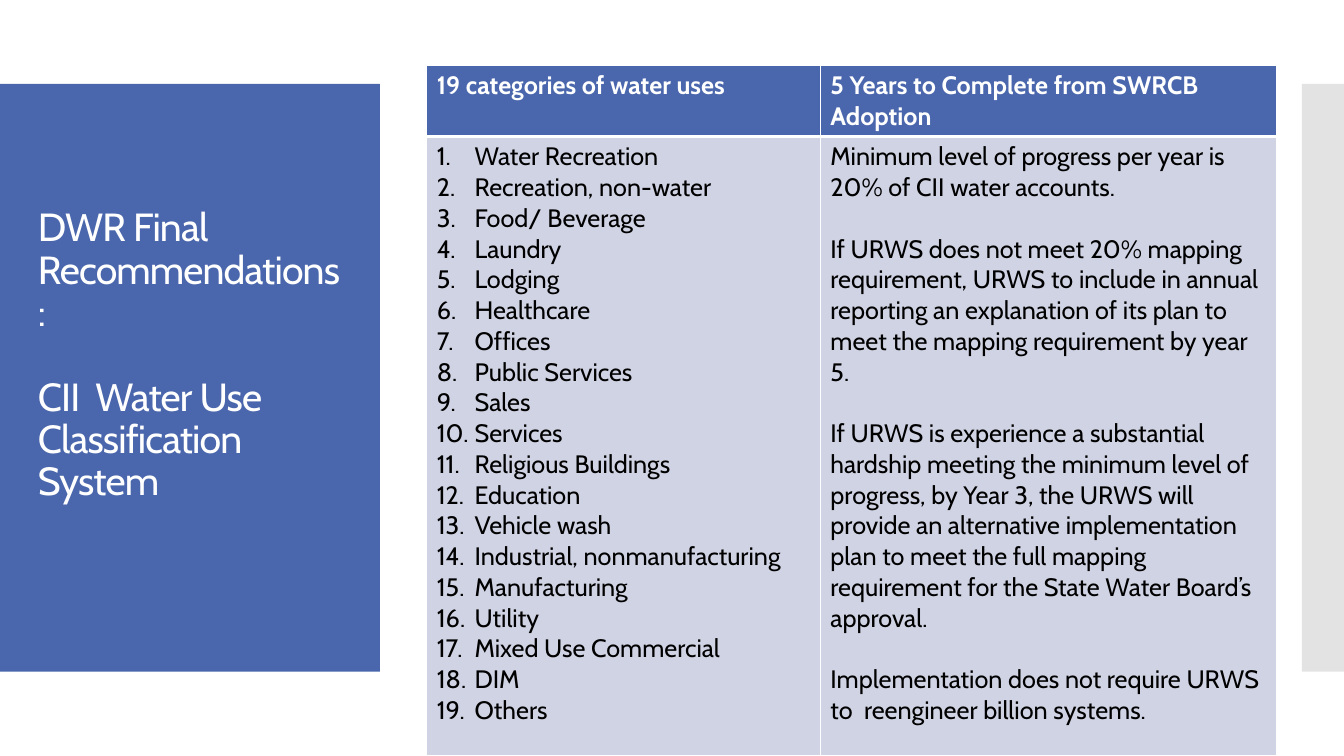
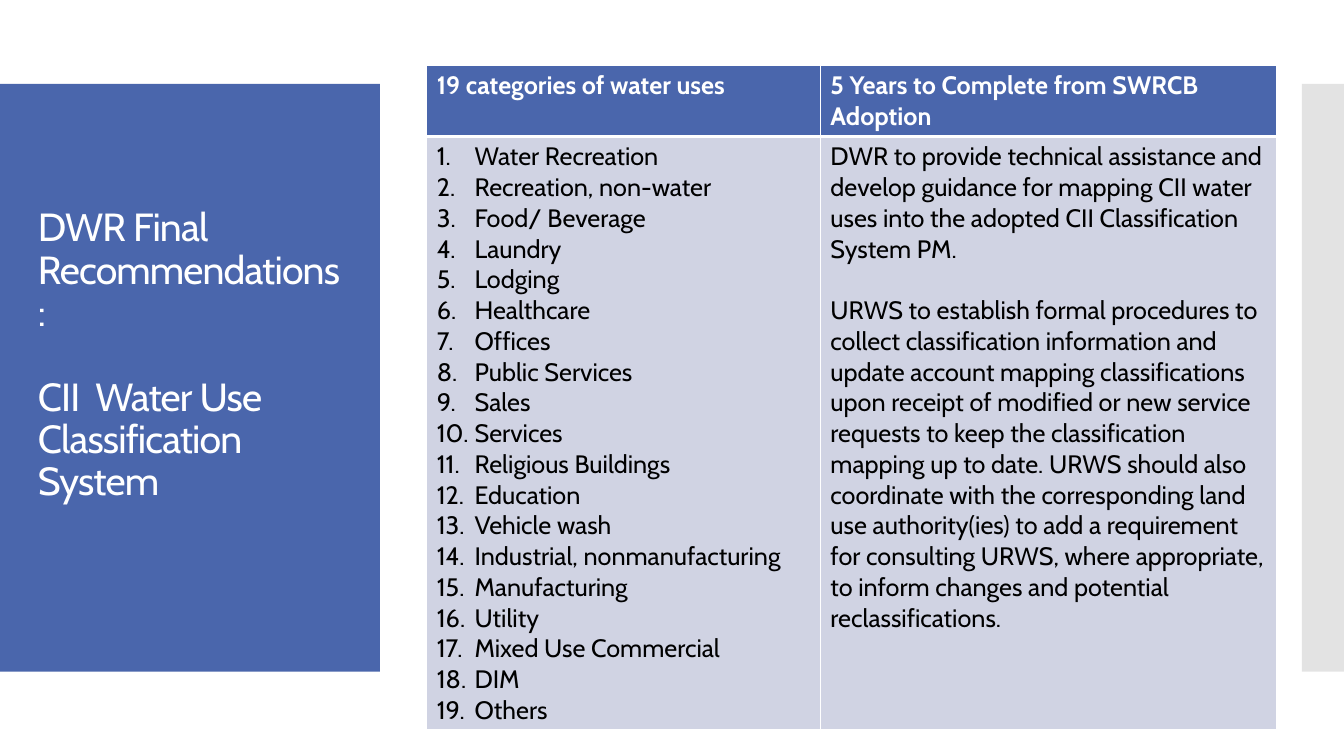
"""Build two slides on the CII water use classification recommendations."""
from lxml import etree
from pptx import Presentation
from pptx.dml.color import RGBColor
from pptx.enum.shapes import MSO_SHAPE
from pptx.enum.text import MSO_ANCHOR
from pptx.oxml.ns import qn
from pptx.util import Pt

RECT = MSO_SHAPE.RECTANGLE
MIDDLE = MSO_ANCHOR.MIDDLE
BLUE = RGBColor(0x4A, 0x66, 0xAC)
PALE = RGBColor(0xD0, 0xD3, 0xE3)
GREY = RGBColor(0xC8, 0xC8, 0xC8)
WHITE = RGBColor(0xFF, 0xFF, 0xFF)
BLACK = RGBColor(0, 0, 0)
FONT = "Cabin"

TITLE = ["DWR Final\vRecommendations:", "CII  Water Use Classification System"]
HEADERS = ["19 categories of water uses", "5 Years to Complete from SWRCB Adoption"]
CATEGORIES = [
    "Water Recreation", "Recreation, non-water", "Food/ Beverage", "Laundry",
    "Lodging", "Healthcare", "Offices", "Public Services", "Sales", "Services",
    "Religious Buildings", "Education", "Vehicle wash",
    "Industrial, nonmanufacturing", "Manufacturing", "Utility",
    "Mixed Use Commercial", "DIM", "Others",
]
SLIDES = [
    {"row_height": 442, "notes": [
        "Minimum level of progress per year is 20% of CII water accounts.",
        "If URWS does not meet 20% mapping requirement, URWS to include in annual "
        "reporting an explanation of its plan to meet the mapping requirement by year 5.",
        "If URWS is experience a substantial hardship meeting the minimum level of "
        "progress, by Year 3, the URWS will provide an alternative implementation plan "
        "to meet the full mapping requirement for the State Water Board’s approval.",
        "Implementation does not require URWS to  reengineer billion systems.",
    ]},
    {"row_height": 424, "notes": [
        "DWR to provide technical assistance and develop guidance for mapping CII water "
        "uses into the adopted CII Classification System PM.",
        "URWS to establish formal procedures to collect classification information and "
        "update account mapping classifications upon receipt of modified or new service "
        "requests to keep the classification mapping up to date. URWS should also "
        "coordinate with the corresponding land use authority(ies) to add a requirement "
        "for consulting URWS, where appropriate, to inform changes and potential "
        "reclassifications.",
    ]},
]

SLIDE_W, SLIDE_H = 960, 540
BAND_TOP, BAND_H = 60, 419.75
TITLE_W, EDGE_W = 271.3, 30
TITLE_BOX = (20, 88.5, 232, 362)
TABLE_LEFT, TABLE_TOP = 304.8, 46.4
COLUMNS = [281.2, 325.8]
HEADER_H = 51
TITLE_LINE, BODY_LINE = 30.2, 22
NUMBER_INDENT = 27

TITLE_FONT = {"name": FONT, "size": Pt(28)}
HEADER_FONT = {"name": FONT, "size": Pt(18), "bold": True}
BODY_FONT = {"name": FONT, "size": Pt(18), "bold": False}


def add_band(s, left, width, color, alpha=None):
    sp = s.shapes.add_shape(RECT, Pt(left), Pt(BAND_TOP), Pt(width), Pt(BAND_H))
    sp.shadow.inherit = False
    sp.line.fill.background()
    sp.fill.solid()
    sp.fill.fore_color.rgb = color
    if alpha:
        clr = sp.fill._xPr.find(".//" + qn("a:srgbClr"))
        etree.SubElement(clr, qn("a:alpha"), val=str(alpha * 1000))


def write(tf, lines, font, color, gap=0):
    tf.text = "\n".join(lines)
    for i, p in enumerate(tf.paragraphs):
        p.space_before = Pt(gap if i else 0)
        for r in p.runs:
            for name, value in font.items():
                setattr(r.font, name, value)
            r.font.color.rgb = color


def number(tf):
    for p in tf.paragraphs:
        pPr = p._p.get_or_add_pPr()
        pPr.set("marL", str(Pt(NUMBER_INDENT)))
        pPr.set("indent", str(-Pt(NUMBER_INDENT)))
        etree.SubElement(pPr, qn("a:buFont"), typeface="+mj-lt")
        etree.SubElement(pPr, qn("a:buAutoNum"), type="arabicPeriod")


def style_cell(cell, color, top, bottom):
    tcPr = cell._tc.get_or_add_tcPr()
    for side, width in {"L": 1, "R": 1, "T": top, "B": bottom}.items():
        ln = etree.SubElement(tcPr, qn("a:ln" + side), w=str(Pt(width)))
        fill = etree.SubElement(ln, qn("a:solidFill"))
        etree.SubElement(fill, qn("a:srgbClr"), val=str(WHITE))
    cell.fill.solid()
    cell.fill.fore_color.rgb = color


def add_title(s):
    tf = s.shapes.add_textbox(*map(Pt, TITLE_BOX)).text_frame
    tf.word_wrap = True
    tf.vertical_anchor = MIDDLE
    tf.margin_bottom = Pt(3.6 + TITLE_LINE)
    write(tf, TITLE, TITLE_FONT, WHITE, TITLE_LINE)
    for p in tf.paragraphs:
        p.line_spacing = 0.9
        for r in p.runs:
            r.font._element.set("spc", "-60")


def add_uses_table(s, notes, row_height):
    heights = [HEADER_H, row_height]
    frame = s.shapes.add_table(2, 2, Pt(TABLE_LEFT), Pt(TABLE_TOP),
                               Pt(sum(COLUMNS)), Pt(sum(heights)))
    table = frame.table
    table.horz_banding = False
    for row, height in zip(table.rows, heights):
        row.height = Pt(height)
    for c, (width, header, body) in enumerate(zip(COLUMNS, HEADERS, [CATEGORIES, notes])):
        table.columns[c].width = Pt(width)
        head, cell = table.cell(0, c), table.cell(1, c)
        style_cell(head, BLUE, 1, 3)
        style_cell(cell, PALE, 3, 1)
        write(head.text_frame, [header], HEADER_FONT, WHITE)
        write(cell.text_frame, body, BODY_FONT, BLACK, BODY_LINE if c else 0)
    number(table.cell(1, 0).text_frame)


def main():
    prs = Presentation()
    prs.slide_width, prs.slide_height = Pt(SLIDE_W), Pt(SLIDE_H)
    for content in SLIDES:
        s = prs.slides.add_slide(prs.slide_layouts[6])
        add_band(s, 0, TITLE_W, BLUE)
        add_band(s, SLIDE_W - EDGE_W, EDGE_W, GREY, 50)
        add_title(s)
        add_uses_table(s, **content)
    prs.save("out.pptx")


if __name__ == "__main__":
    main()
